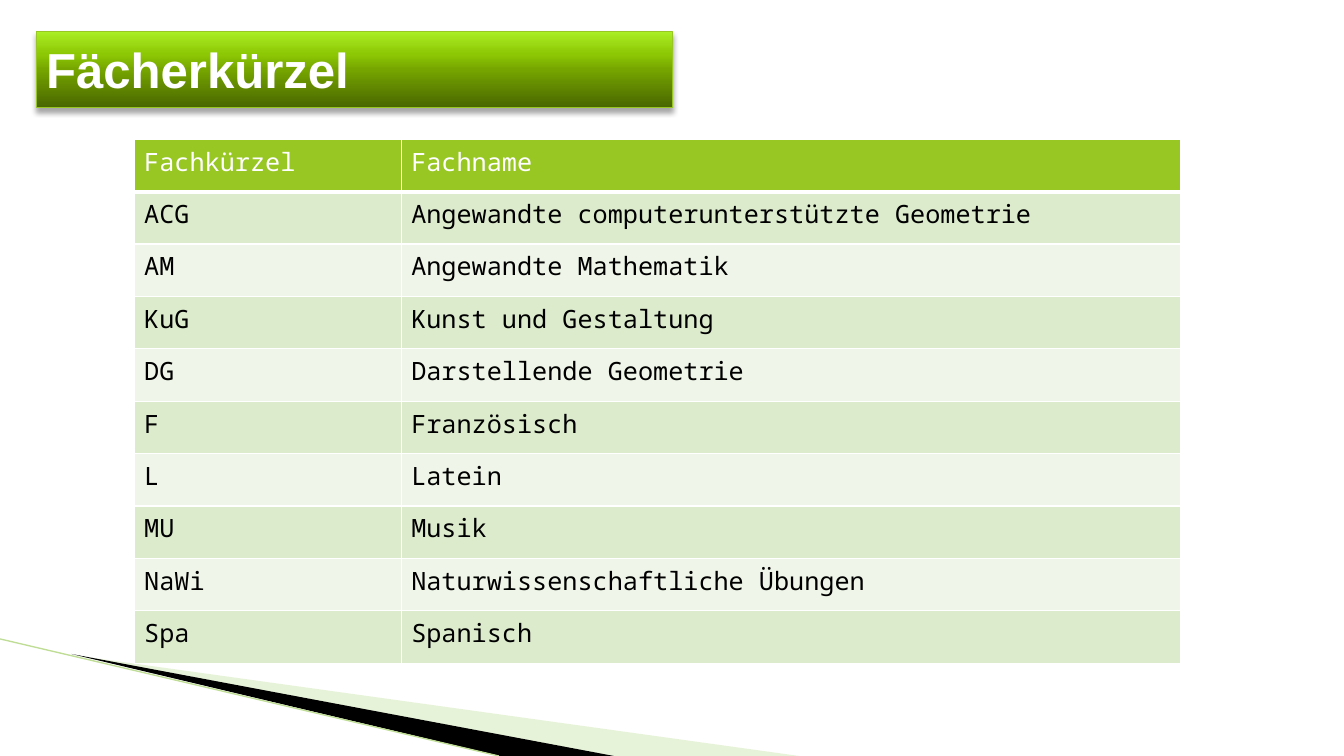
import dataclasses
import typing

import lxml.etree
import pptx
import pptx.dml.color
import pptx.enum.shapes
import pptx.enum.text
import pptx.oxml.ns
import pptx.util

Cm = pptx.util.Cm
Pt = pptx.util.Pt
RGB = pptx.dml.color.RGBColor
qn = pptx.oxml.ns.qn

WHITE = RGB(0xFF, 0xFF, 0xFF)
BLACK = RGB(0x00, 0x00, 0x00)
GREEN = RGB(0x98, 0xC7, 0x23)
PALE = RGB(0xC5, 0xE1, 0x9F)
EDGE = RGB(0xBF, 0xDD, 0x95)
BANDS = (RGB(0xDD, 0xEB, 0xCD), RGB(0xEF, 0xF5, 0xE8))
SHADES = (
    (0, RGB(0x49, 0x67, 0x00)),
    (50, RGB(0x76, 0xA5, 0x00)),
    (70, RGB(0x8D, 0xC8, 0x04)),
    (100, RGB(0xAA, 0xEE, 0x25)),
)
ROW = 1.32
COLS = (6.73, 19.63)


@dataclasses.dataclass
class Wedge:
    points: tuple[tuple[float, float], ...]
    color: RGB
    alpha: int


@dataclasses.dataclass
class Subject:
    code: str
    name: str


WEDGES = (
    Wedge(((1.85, 16.51), (20.14, 19.05), (15.44, 19.05)), PALE, 40),
    Wedge(((1.8, 16.48), (15.47, 19.05), (12.6, 19.05)), BLACK, 100),
)
HEAD = Subject("Fachkürzel", "Fachname")
SUBJECTS = (
    Subject("ACG", "Angewandte computerunterstützte Geometrie"),
    Subject("AM", "Angewandte Mathematik"),
    Subject("KuG", "Kunst und Gestaltung"),
    Subject("DG", "Darstellende Geometrie"),
    Subject("F", "Französisch"),
    Subject("L", "Latein"),
    Subject("MU", "Musik"),
    Subject("NaWi", "Naturwissenschaftliche Übungen"),
    Subject("Spa", "Spanisch"),
)


def add_node(parent: typing.Any, tag: str, **attrs: typing.Any) -> typing.Any:
    values = {key: str(value) for key, value in attrs.items()}
    return lxml.etree.SubElement(parent, qn(tag), values)


def add_tint(parent: typing.Any, color: RGB, alpha: int = 100) -> None:
    tint = add_node(parent, "a:srgbClr", val=color)
    if alpha < 100:
        add_node(tint, "a:alpha", val=alpha * 1000)


def add_run(frame: typing.Any, text: str, face: str, size: float,
            color: RGB, bold: bool) -> None:
    run = frame.paragraphs[0].add_run()
    run.text = text
    run.font.name = face
    run.font.size = Pt(size)
    run.font.bold = bold
    run.font.color.rgb = color


def draw_wedge(slide: typing.Any, wedge: Wedge) -> None:
    first, *rest = [(Cm(x), Cm(y)) for x, y in wedge.points]
    pen = slide.shapes.build_freeform(*first)
    pen.add_line_segments(rest)
    shape = pen.convert_to_shape()
    shape.shadow.inherit = False
    shape.line.fill.background()
    shape.fill.solid()
    shape.fill.fore_color.rgb = wedge.color
    if wedge.alpha < 100:
        tint = shape.element.spPr.find(".//" + qn("a:srgbClr"))
        add_node(tint, "a:alpha", val=wedge.alpha * 1000)


def draw_edge(slide: typing.Any) -> None:
    edge = slide.shapes.add_connector(
        pptx.enum.shapes.MSO_CONNECTOR.STRAIGHT,
        Cm(0), Cm(16.1), Cm(12.57), Cm(19.05))
    edge.line.color.rgb = EDGE
    edge.line.width = Pt(0.95)
    add_node(edge.element.spPr, "a:effectLst")


def draw_title(slide: typing.Any) -> None:
    title = slide.shapes.title
    title.left, title.top = Cm(0.91), Cm(0.79)
    title.width, title.height = Cm(16.03), Cm(1.91)

    # Gradient, dark at the bottom
    title.fill.gradient()
    title.fill.gradient_angle = 90
    stops = title.element.spPr.find(".//" + qn("a:gsLst"))
    for stop in list(stops):
        stops.remove(stop)
    for place, color in SHADES:
        add_tint(add_node(stops, "a:gs", pos=place * 1000), color)
    title.line.color.rgb = GREEN
    title.line.width = Pt(0.75)

    # Soft shadow below
    effects = add_node(title.element.spPr, "a:effectLst")
    shadow = add_node(effects, "a:outerShdw", blurRad=Pt(4), dist=Pt(3),
                      dir=90 * 60000, rotWithShape=0)
    add_tint(shadow, BLACK, 35)

    frame = title.text_frame
    frame.auto_size = pptx.enum.text.MSO_AUTO_SIZE.NONE
    frame.vertical_anchor = pptx.enum.text.MSO_ANCHOR.MIDDLE
    frame.paragraphs[0].alignment = pptx.enum.text.PP_ALIGN.LEFT
    add_run(frame, "Fächerkürzel", "Arial", 35.1, WHITE, True)


def fill_cell(cell: typing.Any, text: str, ink: RGB, back: RGB,
              base: int) -> None:
    props = cell._tc.get_or_add_tcPr()
    for side, width in (("L", 1), ("R", 1), ("T", 1), ("B", base)):
        line = add_node(props, "a:ln" + side, w=Pt(width))
        add_tint(add_node(line, "a:solidFill"), WHITE)
    cell.fill.solid()
    cell.fill.fore_color.rgb = back
    add_run(cell.text_frame, text, "Noto Sans Mono", 18, ink, False)


def draw_table(slide: typing.Any) -> None:
    rows = (HEAD, *SUBJECTS)
    table = slide.shapes.add_table(
        len(rows), len(COLS), Cm(3.38), Cm(3.51),
        Cm(sum(COLS)), Cm(ROW * len(rows))).table
    for col, width in zip(table.columns, COLS):
        col.width = Cm(width)
    for i, subject in enumerate(rows):
        table.rows[i].height = Cm(ROW)
        if i == 0:
            ink, back, base = WHITE, GREEN, 3
        else:
            ink, back, base = BLACK, BANDS[(i - 1) % 2], 1
        for j, text in enumerate((subject.code, subject.name)):
            fill_cell(table.cell(i, j), text, ink, back, base)


def main() -> None:
    deck = pptx.Presentation()
    deck.slide_width, deck.slide_height = Cm(33.87), Cm(19.05)
    slide = deck.slides.add_slide(deck.slide_layouts[5])

    # Corner wedges
    for wedge in WEDGES:
        draw_wedge(slide, wedge)
    draw_edge(slide)

    # Heading and subjects
    draw_title(slide)
    draw_table(slide)
    deck.save("out.pptx")


if __name__ == "__main__":
    main()
